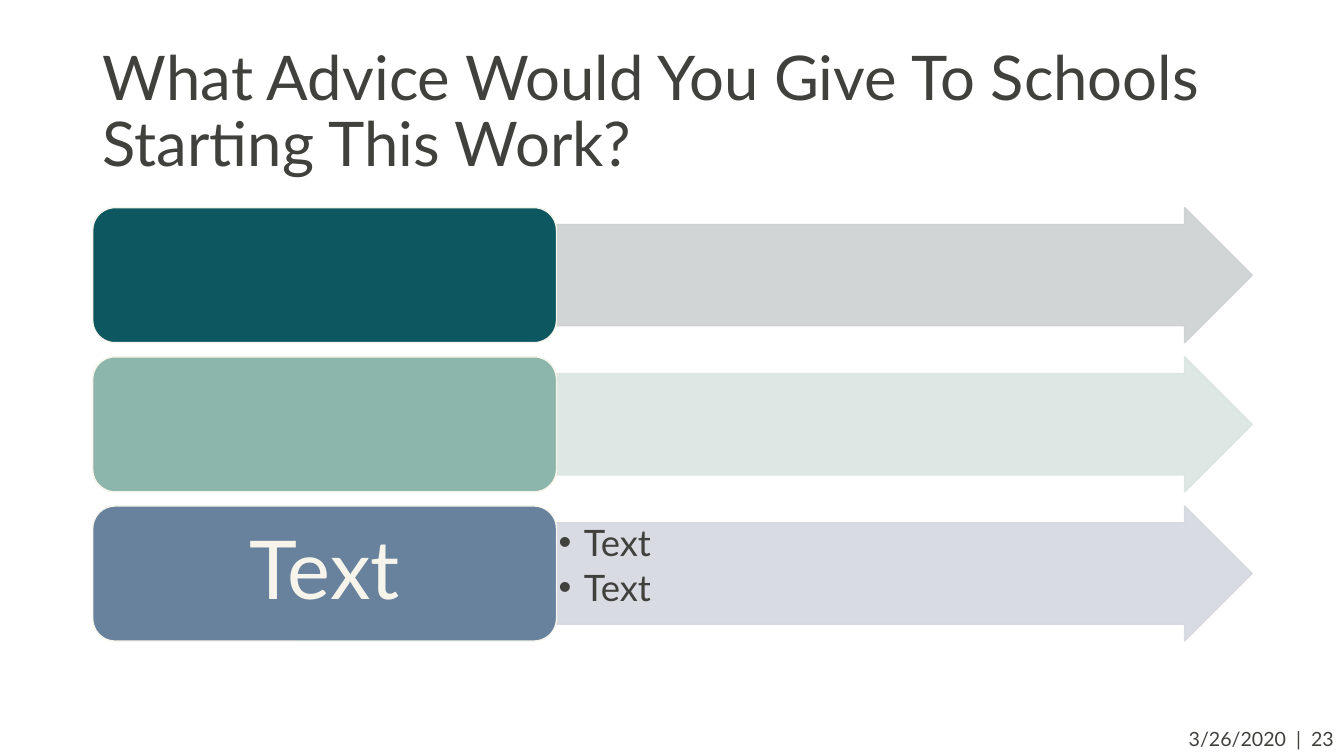
from dataclasses import dataclass

from lxml import etree
from pptx import Presentation
from pptx import util as u
from pptx.dml.color import RGBColor
from pptx.enum import shapes, text
from pptx.oxml.ns import qn


@dataclass(frozen=True)
class Theme:
    font: str = "Lato"
    ink: str = "40403D"
    cream: str = "F7F5EB"
    rows: tuple = (("0D5761", "CCD1D2"), ("8CB5AB", "DAE5E2"), ("68829E", "D4D8DF"))
    title: int = 44
    label: int = 58
    list: int = 26
    foot: int = 14


class Deck:
    def __init__(self, theme):
        self.theme = theme
        self.prs = Presentation()
        self.prs.slide_width = u.Inches(13.33)
        self.prs.slide_height = u.Inches(7.5)
        self.slide = self.prs.slides.add_slide(self.prs.slide_layouts[1])

    def place(self, item, box):
        item.left, item.top, item.width, item.height = map(u.Inches, box)

    def style(self, frame, words, size, color, align, inset=None, space=None):
        """Fill a text frame and give every paragraph and run one style."""
        frame.text = words
        frame.word_wrap = True
        frame.auto_size = text.MSO_AUTO_SIZE.NONE
        if inset:
            frame.margin_left = frame.margin_right = u.Inches(inset[0])
            frame.margin_top = frame.margin_bottom = u.Inches(inset[1])
        for para in frame.paragraphs:
            para.alignment = align
            para.space_before = u.Pt(0)
            para.line_spacing = space
            for run in para.runs:
                run.font.name = self.theme.font
                run.font.size = u.Pt(size)
                run.font.color.rgb = RGBColor.from_string(color)

    def title(self, words, box):
        item = self.slide.shapes.title
        self.place(item, box)
        self.style(item.text_frame, words, self.theme.title, self.theme.ink,
                   text.PP_ALIGN.LEFT, space=0.9)
        item.text_frame.vertical_anchor = text.MSO_ANCHOR.MIDDLE

    def shape(self, kind, box, fill, line, alpha=None):
        item = self.slide.shapes.add_shape(kind, *map(u.Inches, box))
        item.shadow.inherit = False
        item.fill.solid()
        item.fill.fore_color.rgb = RGBColor.from_string(fill)
        item.line.color.rgb = RGBColor.from_string(line)
        item.line.width = u.Pt(1)
        if alpha:
            for color in item._element.spPr.iter(qn("a:srgbClr")):
                etree.SubElement(color, qn("a:alpha"), val=str(alpha * 1000))
        return item

    def arrow(self, box, color):
        item = self.shape(shapes.MSO_SHAPE.RIGHT_ARROW, box, color, color, alpha=90)
        item.adjustments[0], item.adjustments[1] = 0.75, 0.5

    def card(self, box, color, words):
        item = self.shape(shapes.MSO_SHAPE.ROUNDED_RECTANGLE, box, color, self.theme.cream)
        if words:
            self.style(item.text_frame, words, self.theme.label, self.theme.cream,
                       text.PP_ALIGN.CENTER, (0.24, 0.12), 0.9)
            item.text_frame.vertical_anchor = text.MSO_ANCHOR.MIDDLE

    def list(self, lines, box):
        """Put the body placeholder, with bullets, on top of the shapes."""
        item = self.slide.placeholders[1]
        self.slide.shapes._spTree.append(item._element)
        self.place(item, box)
        frame = item.text_frame
        self.style(frame, "\n".join(lines), self.theme.list, self.theme.ink,
                   text.PP_ALIGN.LEFT, (0.02, 0.02), 0.9)
        frame.vertical_anchor = text.MSO_ANCHOR.TOP
        for para in frame.paragraphs:
            para.level = 1
            props = para._p.get_or_add_pPr()
            props.set("marL", str(u.Inches(0.25)))
            props.set("indent", str(-u.Inches(0.25)))
            etree.SubElement(props, qn("a:buFont"), typeface="Arial")
            etree.SubElement(props, qn("a:buChar"), char="•")
            para.space_after = u.Pt(0.15 * self.theme.list)

    def foot(self, words, box):
        item = self.slide.shapes.add_textbox(*map(u.Inches, box))
        self.style(item.text_frame, words, self.theme.foot, self.theme.ink,
                   text.PP_ALIGN.RIGHT)
        item.text_frame.auto_size = text.MSO_AUTO_SIZE.SHAPE_TO_FIT_TEXT


def main():
    theme = Theme()
    deck = Deck(theme)
    left, top, step, high = 0.92, 2.06, 1.48, 1.34
    card, arrow = 4.6, 6.9
    mid = left + card

    deck.title("What Advice Would You Give To Schools Starting This Work?",
               (left, 0.4, card + arrow, 1.45))
    labels = ("", "", "Text")
    for i, ((dark, pale), label) in enumerate(zip(theme.rows, labels)):
        y = top + i * step
        deck.arrow((mid, y, arrow, high), pale)
        deck.card((left, y, card, high), dark, label)
    deck.list(("Text", "Text"), (mid, top + 2 * step + high / 8, 6.4, high * 0.75))
    deck.foot("3/26/2020  |  23", (11.62, 7.16, 1.71, 0.34))
    deck.prs.save("out.pptx")


if __name__ == "__main__":
    main()
